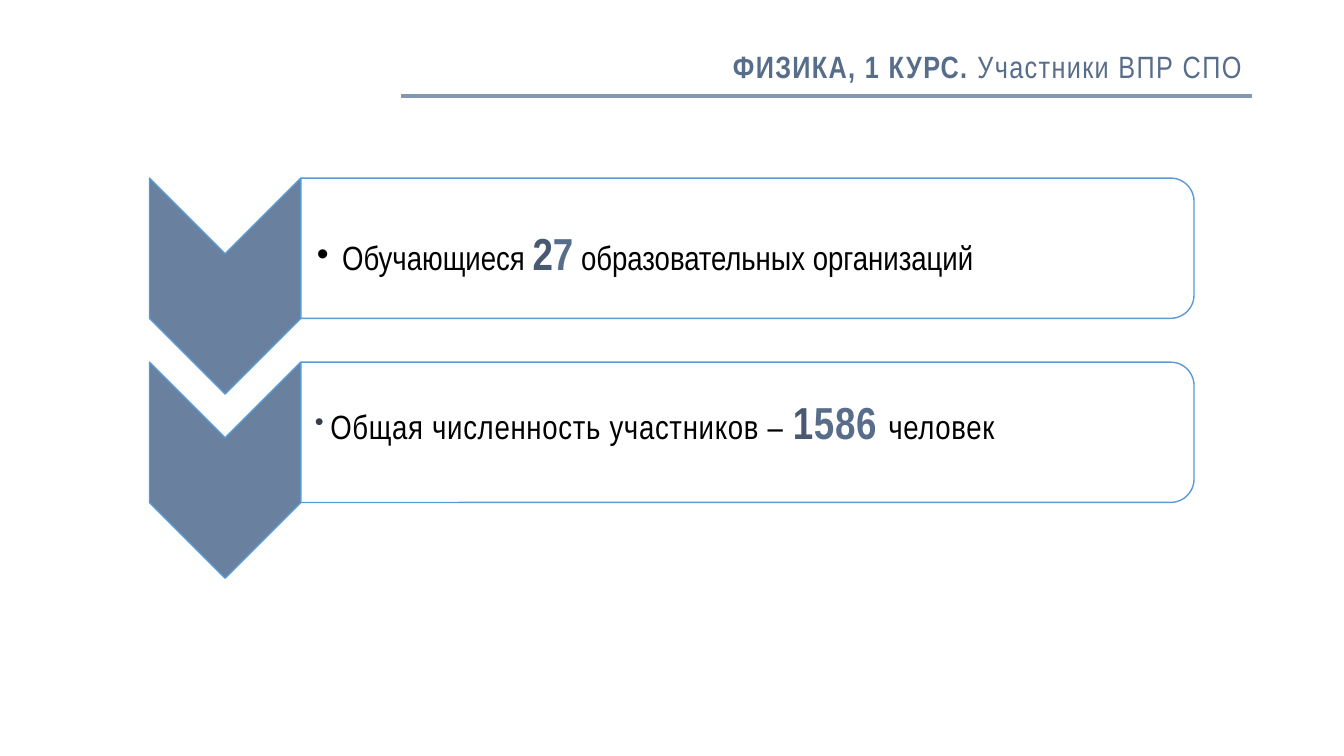
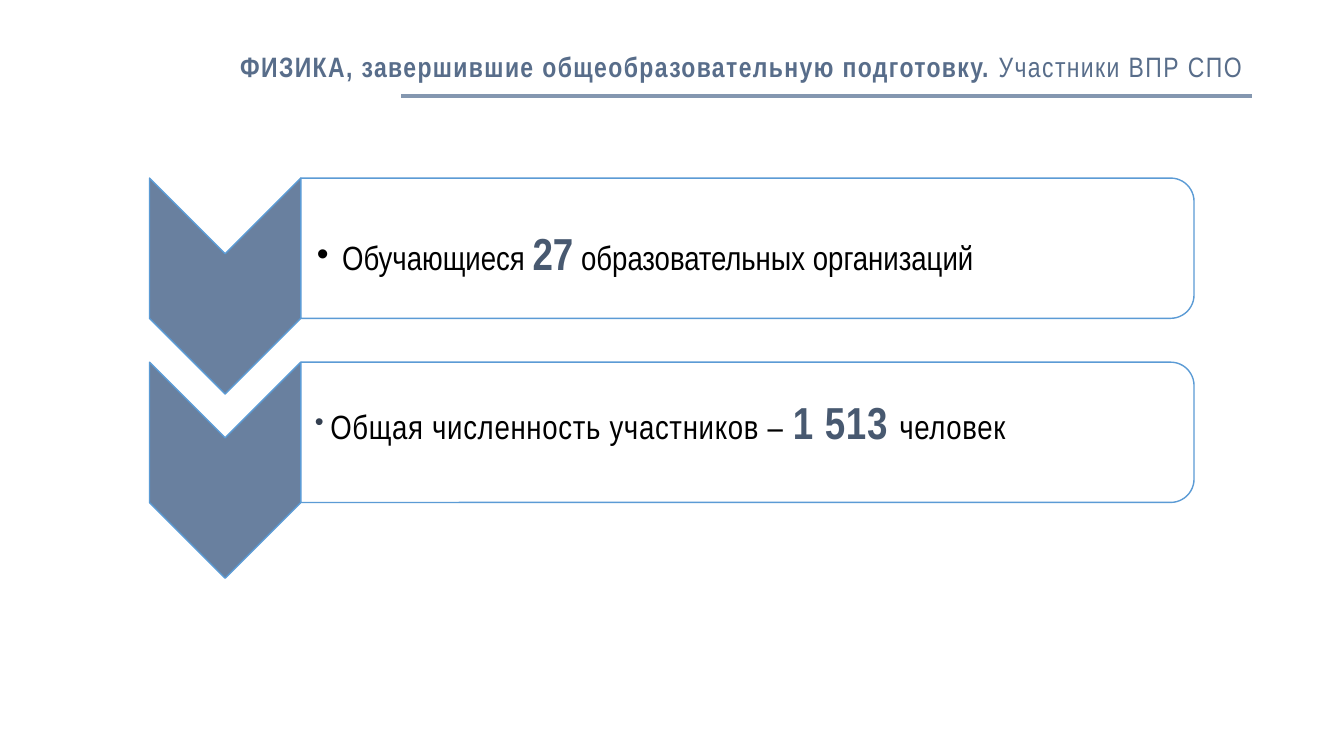
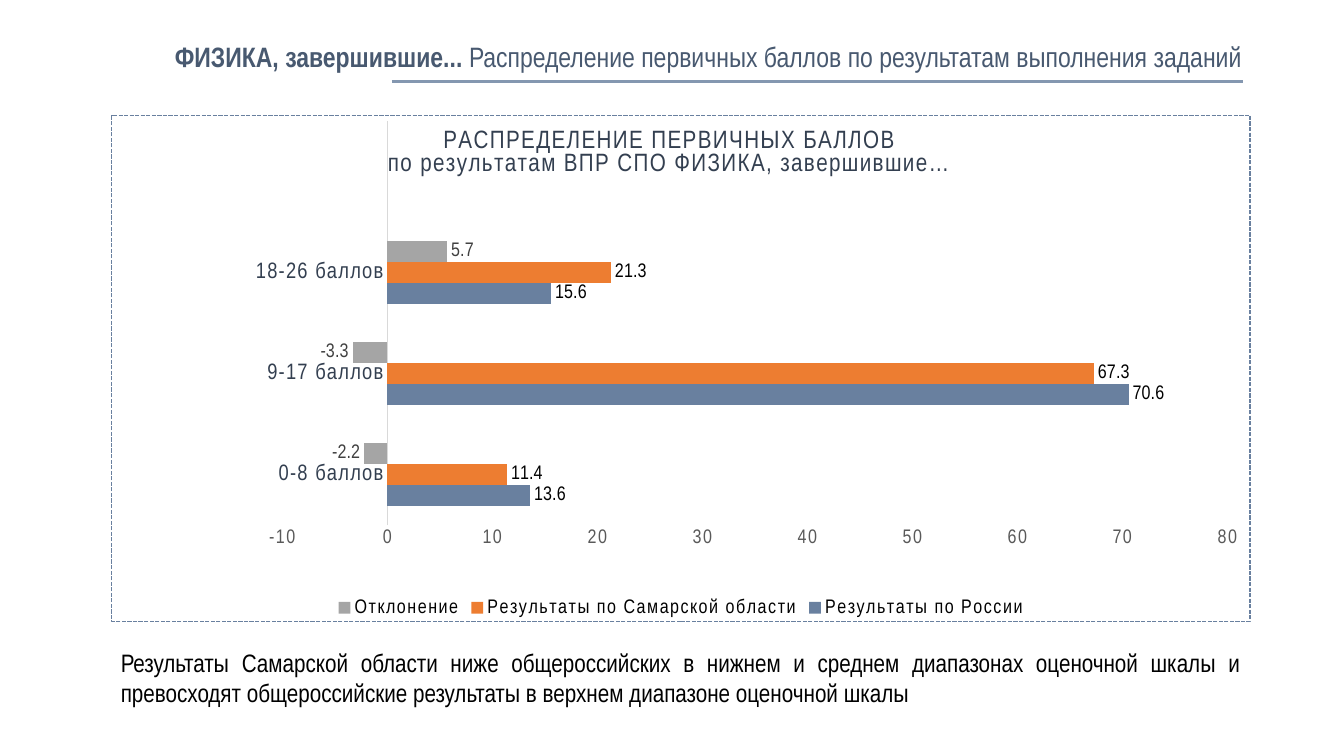
from dataclasses import dataclass

from lxml.etree import SubElement
from pptx import Presentation
from pptx.chart.data import CategoryChartData as Data
from pptx.dml.color import RGBColor as RGB
from pptx.enum.chart import XL_CHART_TYPE as Kind
from pptx.enum.chart import XL_LABEL_POSITION as Spot
from pptx.enum.chart import XL_LEGEND_POSITION as Side
from pptx.enum.chart import XL_TICK_MARK as Tick
from pptx.enum.shapes import MSO_CONNECTOR as Wire
from pptx.enum.shapes import MSO_SHAPE as Form
from pptx.enum.text import MSO_ANCHOR as Anchor
from pptx.enum.text import PP_ALIGN as Align
from pptx.oxml import parse_xml
from pptx.oxml.ns import nsdecls, qn
from pptx.util import Pt


@dataclass(frozen=True)
class Theme:
    font: str = "Arial Narrow"
    black: str = "000000"
    white: str = "FFFFFF"
    navy: str = "333F50"
    dark: str = "485970"
    slate: str = "586D8A"
    steel: str = "69809F"
    rule: str = "8497B0"
    edge: str = "5B9BD5"
    pale: str = "D9D9D9"
    gray: str = "595959"
    ash: str = "404040"
    mute: str = "A5A5A5"
    warm: str = "ED7D31"
    head: int = 20
    big: int = 32
    body: int = 24
    note: int = 18
    cat: int = 16
    small: int = 14


T = Theme()

# Run styles
TEXT = dict(size=T.body, color=T.black)
DARK = dict(size=T.big, color=T.dark, bold=True)
SOFT = dict(size=T.big, color=T.slate, bold=True)

GROUPS = ("Обучающиеся ", " образовательных организаций")
TOTAL = ("Общая численность участников – ", "человек")

# title, its size, its left edge, numbers of the two rows
PEOPLE = [
    ("ФИЗИКА, 1 КУРС. ", 22, 128,
     [[("2", DARK), ("7", SOFT)], [("1", DARK), ("586 ", SOFT)]]),
    ("ФИЗИКА, завершившие общеобразовательную подготовку. ", T.head, 96,
     [[("27", DARK)], [("1 513 ", DARK)]]),
]
WHO = "Участники ВПР СПО"

# Per row: words, letter spacing, line spacing, insets (left, top, bottom),
# hanging indent, bullet colour, bullet size in percent
ROWS = [
    (GROUPS, 0, 0.9, (11.5, 12, 0.7), 18, T.black, 100),
    (TOTAL, 0.5, 1, (10, 0.7, 16), 11, T.navy, 75),
]
TOP, STEP = 127.2, 131.5
ARROW = dict(left=106.8, width=108, height=154.3)
CARD = dict(left=214.9, width=638, height=100.2)

SCORE = ("ФИЗИКА, завершившие... ",
         "Распределение первичных баллов по результатам выполнения заданий")
NAME = ["РАСПРЕДЕЛЕНИЕ ПЕРВИЧНЫХ БАЛЛОВ",
        "по результатам ВПР СПО ФИЗИКА, завершившие…"]
CATS = ["0-8 баллов", "9-17 баллов", "18-26 баллов", ""]
SERIES = [
    ("Результаты по России", (13.6, 70.6, 15.6, None), T.steel, T.black),
    ("Результаты по Самарской области", (11.4, 67.3, 21.3, None),
     T.warm, T.black),
    ("Отклонение", (-2.2, -3.3, 5.7, None), T.mute, T.ash),
]
NOTE = ("Результаты Самарской области ниже общероссийских в нижнем и среднем "
        "диапазонах оценочной шкалы и превосходят общероссийские результаты "
        "в верхнем диапазоне оценочной шкалы")


def put(obj, **vals):
    for key, val in vals.items():
        setattr(obj, key, val)


def ink(font, size, color, bold=False, spc=0):
    """Set a font; spc is letter spacing in points."""
    put(font, name=T.font, size=Pt(size), bold=bold)
    font.color.rgb = RGB.from_string(color)
    if spc:
        font._element.set("spc", str(int(spc * 100)))


def paint(fill, color):
    fill.solid()
    fill.fore_color.rgb = RGB.from_string(color)


def write(slide, box, runs, spc=0, ins=(7.2, 3.6, 3.6),
          anchor=Anchor.MIDDLE, **para):
    """Add a one-paragraph text box and return the paragraph."""
    frame = slide.shapes.add_textbox(*map(Pt, box)).text_frame
    left, top, low = map(Pt, ins)
    put(frame, word_wrap=True, vertical_anchor=anchor,
        margin_left=left, margin_top=top, margin_bottom=low)
    line = frame.paragraphs[0]
    put(line, **para)
    for text, look in runs:
        run = line.add_run()
        run.text = text
        ink(run.font, spc=spc, **look)
    return line


def title(slide, box, pair, size, color, rule, spc=0):
    runs = [(text, dict(size=size, color=color, bold=bold))
            for text, bold in zip(pair, (True, False))]
    write(slide, box, runs, spc, alignment=Align.RIGHT, line_spacing=0.9)
    left, y = rule
    line = slide.shapes.add_connector(
        Wire.STRAIGHT, *map(Pt, (left, y, left + 607.7, y)))
    line.line.color.rgb = RGB.from_string(T.rule)
    line.line.width = Pt(2.25)
    SubElement(line._element.spPr, qn("a:effectLst"))


def turned(slide, form, fill, top, left, width, height):
    """Add a shape turned by 90 degrees that fills the given box."""
    x, y = left + (width - height) / 2, top + (height - width) / 2
    shape = slide.shapes.add_shape(form, *map(Pt, (x, y, height, width)))
    shape.rotation = 90
    shape.shadow.inherit = False
    paint(shape.fill, fill)
    shape.line.color.rgb = RGB.from_string(T.edge)
    shape.line.width = Pt(1)


def bullet(line, hang, color, part):
    props = line._p.get_or_add_pPr()
    for key, val in (("marL", hang), ("indent", -hang)):
        props.set(key, str(Pt(val)))
    tint = SubElement(props, qn("a:buClr"))
    SubElement(tint, qn("a:srgbClr"), val=color)
    SubElement(props, qn("a:buSzPct"), val=str(part * 1000))
    SubElement(props, qn("a:buFont"), typeface="Arial")
    SubElement(props, qn("a:buChar"), char="•")


def people(slide, name, size, left, nums):
    for i, (row, num) in enumerate(zip(ROWS, nums)):
        (pre, post), spc, gap, ins, *mark = row
        top = TOP + i * STEP
        turned(slide, Form.CHEVRON, T.steel, top, **ARROW)
        turned(slide, Form.ROUND_2_SAME_RECTANGLE, T.white, top, **CARD)
        box = (CARD["left"], top + 4.9, 633, 90.4)
        runs = [(pre, TEXT), *num, (post, TEXT)]
        bullet(write(slide, box, runs, spc, ins, line_spacing=gap), *mark)
    title(slide, (left, 28.8, 894.2 - left, 39.6), (name, WHO), size,
          T.slate, (286.6, 68.6), spc=1)


def place(node, at, **vals):
    """Give a chart part a manual layout as child number at."""
    for old in node.findall(qn("c:layout")):
        node.remove(old)
    lay = parse_xml(f"<c:layout {nsdecls('c')}><c:manualLayout/></c:layout>")
    for key, val in vals.items():
        SubElement(lay[0], qn("c:" + key), val=str(val))
    node.insert(at, lay)


def bars(slide, box):
    data = Data()
    data.categories = CATS
    for name, vals, *_ in SERIES:
        data.add_series(name, vals)
    chart = slide.shapes.add_chart(
        Kind.BAR_CLUSTERED, *map(Pt, box), data).chart
    put(chart, has_title=True, has_legend=True)
    chart.font.name, chart.font.size = "Calibri", Pt(10)

    head = chart.chart_title
    frame = head.text_frame
    frame.text = "\n".join(NAME)
    for line in frame.paragraphs:
        ink(line.runs[0].font, T.note, T.navy, spc=1)
    place(head._element, 1, xMode="edge", yMode="edge", x=0.24, y=0.02)

    put(chart.legend, position=Side.BOTTOM, include_in_layout=False)
    ink(chart.legend.font, T.small, T.black, spc=1)

    cat, val = chart.category_axis, chart.value_axis
    for axis, size, color in ((cat, T.cat, T.navy), (val, T.small, T.gray)):
        put(axis, has_major_gridlines=False, major_tick_mark=Tick.NONE,
            minor_tick_mark=Tick.NONE)
        ink(axis.tick_labels.font, size, color, spc=1)
    cat.format.line.color.rgb = RGB.from_string(T.pale)
    cat.format.line.width = Pt(0.75)
    val.format.line.fill.background()
    put(val, minimum_scale=-10, maximum_scale=80, major_unit=10)

    plot = chart.plots[0]
    put(plot, gap_width=182, overlap=0, vary_by_categories=False)
    for part, (_, _, fill, color) in zip(plot.series, SERIES):
        paint(part.format.fill, fill)
        part.invert_if_negative = False
        put(part.data_labels, show_value=True, position=Spot.OUTSIDE_END)
        ink(part.data_labels.font, T.small, color)

    space = chart._chartSpace
    place(space.chart.plotArea, 0, layoutTarget="inner", xMode="edge",
          yMode="edge", x=0.15, y=0.01, w=0.83, h=0.8)
    space.chart.addnext(parse_xml(
        f'<c:spPr {nsdecls("c", "a")}><a:noFill/><a:ln w="{Pt(1)}">'
        f'<a:solidFill><a:srgbClr val="{T.steel}"/></a:solidFill>'
        '<a:prstDash val="sysDash"/></a:ln></c:spPr>'))


def scores(slide):
    title(slide, (50.4, 13, 843.8, 57.6), SCORE, T.head, T.dark, (280, 58.3))
    bars(slide, (79.2, 82.1, 814.3, 362.2))
    write(slide, (79.2, 458.6, 814.3, 51),
          [(NOTE, dict(size=T.note, color=T.black))],
          anchor=Anchor.TOP, alignment=Align.JUSTIFY)


def main():
    deck = Presentation()
    put(deck, slide_width=Pt(960), slide_height=Pt(540))
    blank = deck.slide_layouts[6]
    for page in PEOPLE:
        people(deck.slides.add_slide(blank), *page)
    scores(deck.slides.add_slide(blank))
    deck.save("out.pptx")


if __name__ == "__main__":
    main()
